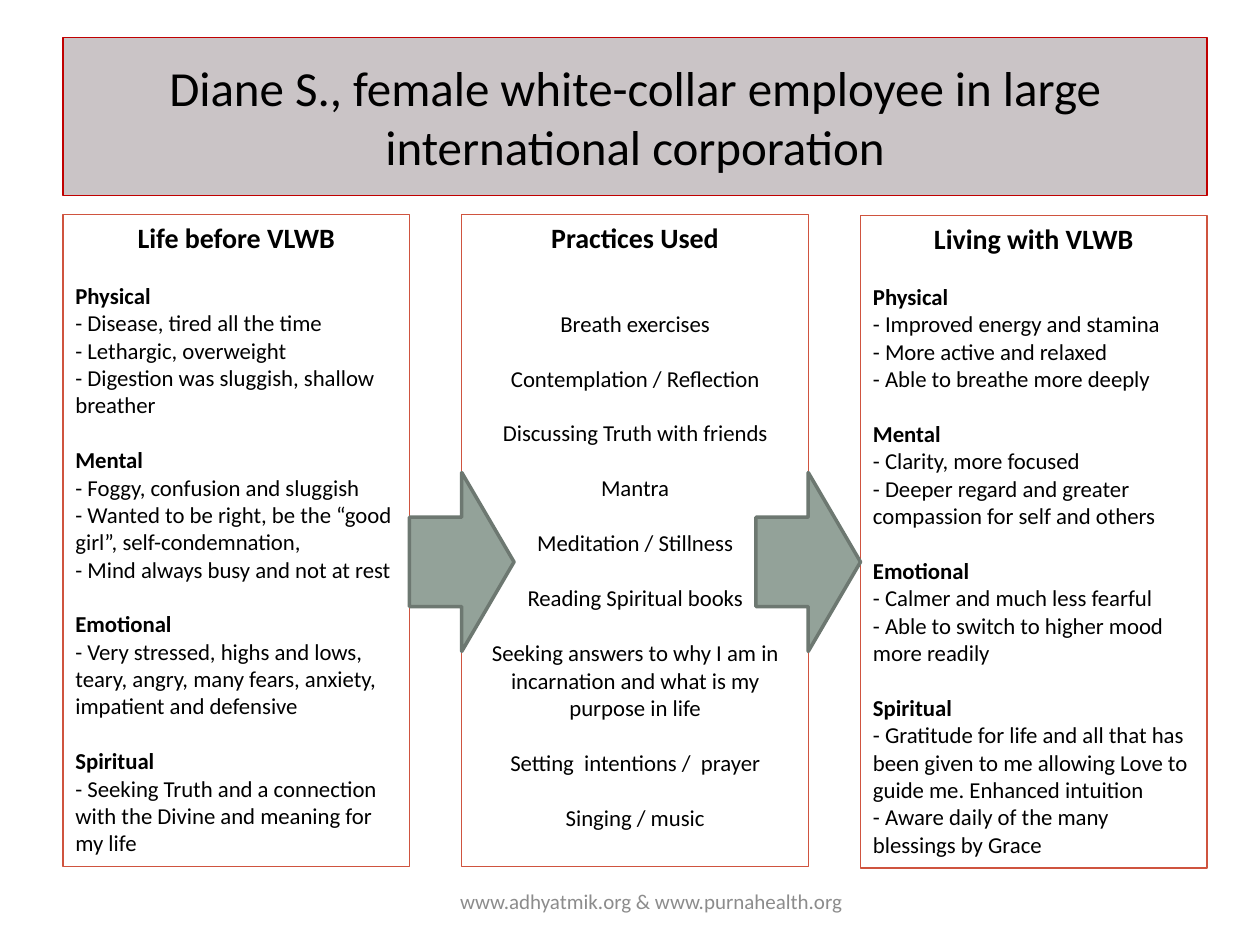
from pptx import Presentation
from pptx.dml.color import RGBColor
from pptx.enum.shapes import MSO_SHAPE as SHAPE
from pptx.enum.text import MSO_ANCHOR as ANCHOR, PP_ALIGN as ALIGN
from pptx.util import Inches, Pt

BLACK = RGBColor(0x00, 0x00, 0x00)
GREY = RGBColor(0x8C, 0x8C, 0x8C)
MAUVE = RGBColor(0xCA, 0xC4, 0xC6)
DARK_RED = RGBColor(0xC0, 0x00, 0x00)
RUST = RGBColor(0xCF, 0x54, 0x3F)
SAGE = RGBColor(0x93, 0xA2, 0x99)
DARK_SAGE = RGBColor(0x6D, 0x78, 0x71)

# Grid: three columns between equal side margins
LEFT, COL_W, PITCH = 0.5, 2.75, 3.165
COL_H = 5.18
GAP = Pt(15.8)  # one body line

BEFORE = [
    ("Physical", ["Disease, tired all the time", "Lethargic, overweight",
                  "Digestion was sluggish, shallow breather"]),
    ("Mental", ["Foggy, confusion and sluggish",
                "Wanted to be right, be the “good girl”, self-condemnation,",
                "Mind always busy and not at rest"]),
    ("Emotional", ["Very stressed, highs and lows, teary, angry, many fears, "
                   "anxiety, impatient and defensive"]),
    ("Spiritual", ["Seeking Truth and a connection with the Divine and "
                   "meaning for my life"]),
]
PRACTICES = [
    "Breath exercises", "Contemplation / Reflection",
    "Discussing Truth with friends", "Mantra", "Meditation / Stillness",
    "Reading Spiritual books",
    "Seeking answers to why I am in incarnation and what is my purpose in life",
    "Setting  intentions /  prayer", "Singing / music",
]
AFTER = [
    ("Physical", ["Improved energy and stamina", "More active and relaxed",
                  "Able to breathe more deeply"]),
    ("Mental", ["Clarity, more focused",
                "Deeper regard and greater compassion for self and others"]),
    ("Emotional", ["Calmer and much less fearful",
                   "Able to switch to higher mood more readily"]),
    ("Spiritual", ["Gratitude for life and all that has been given to me "
                   "allowing Love to guide me. Enhanced intuition",
                   "Aware daily of the many blessings by Grace"]),
]


def add_box(kind, x, y, w, h, fill, line, weight, anchor=ANCHOR.TOP):
    sp = slide.shapes.add_shape(kind, Inches(x), Inches(y), Inches(w), Inches(h))
    sp.shadow.inherit = False
    for part, color in ((sp.fill, fill), (sp.line.fill, line)):
        if color is None:
            part.background()
        else:
            part.solid()
            part.fore_color.rgb = color
    if line is not None:
        sp.line.width = Pt(weight)
    sp.text_frame.word_wrap = True
    sp.text_frame.vertical_anchor = anchor
    return sp


def add_text(tf, text, size, color=BLACK, bold=False, align=ALIGN.CENTER, before=0):
    p = tf.add_paragraph() if tf.text else tf.paragraphs[0]
    p.text = text
    p.alignment = align
    if before:
        p.space_before = before
    p.font.name, p.font.size, p.font.bold = "Calibri", Pt(size), bold
    p.font.color.rgb = color


prs = Presentation()
prs.slide_width, prs.slide_height = Inches(10), Inches(7.5)
slide = prs.slides.add_slide(prs.slide_layouts[6])

# Title band
sp = add_box(SHAPE.RECTANGLE, LEFT, 0.3, 2 * PITCH + COL_W, 1.25,
             MAUVE, DARK_RED, 0.75, ANCHOR.MIDDLE)
add_text(sp.text_frame,
         "Diane S., female white-collar employee in large international corporation", 28)

# Columns
columns = [("Life before VLWB", 1.7, BEFORE), ("Practices Used", 1.7, PRACTICES),
           ("Living with VLWB", 1.71, AFTER)]
for i, (heading, top, content) in enumerate(columns):
    sp = add_box(SHAPE.RECTANGLE, LEFT + i * PITCH, top, COL_W, COL_H, None, RUST, 0.75)
    tf = sp.text_frame
    add_text(tf, heading, 16, bold=True)
    if content is PRACTICES:
        for n, practice in enumerate(content):
            add_text(tf, practice, 13, before=GAP if n else 2 * GAP)
    else:
        for area, notes in content:
            add_text(tf, area, 13, bold=True, align=ALIGN.LEFT, before=GAP)
            for note in notes:
                add_text(tf, f"- {note}", 13, align=ALIGN.LEFT)

# Arrows from column to column
for x in (LEFT + COL_W, 6):
    add_box(SHAPE.RIGHT_ARROW, x, 3.75, 0.83, 1.42, SAGE, DARK_SAGE, 2)

# Footer
sp = slide.shapes.add_textbox(Inches(3.42), Inches(6.95), Inches(3.5), Inches(0.4))
sp.text_frame.word_wrap = True
sp.text_frame.vertical_anchor = ANCHOR.MIDDLE
add_text(sp.text_frame, "www.adhyatmik.org & www.purnahealth.org", 12, GREY)

prs.save("out.pptx")
